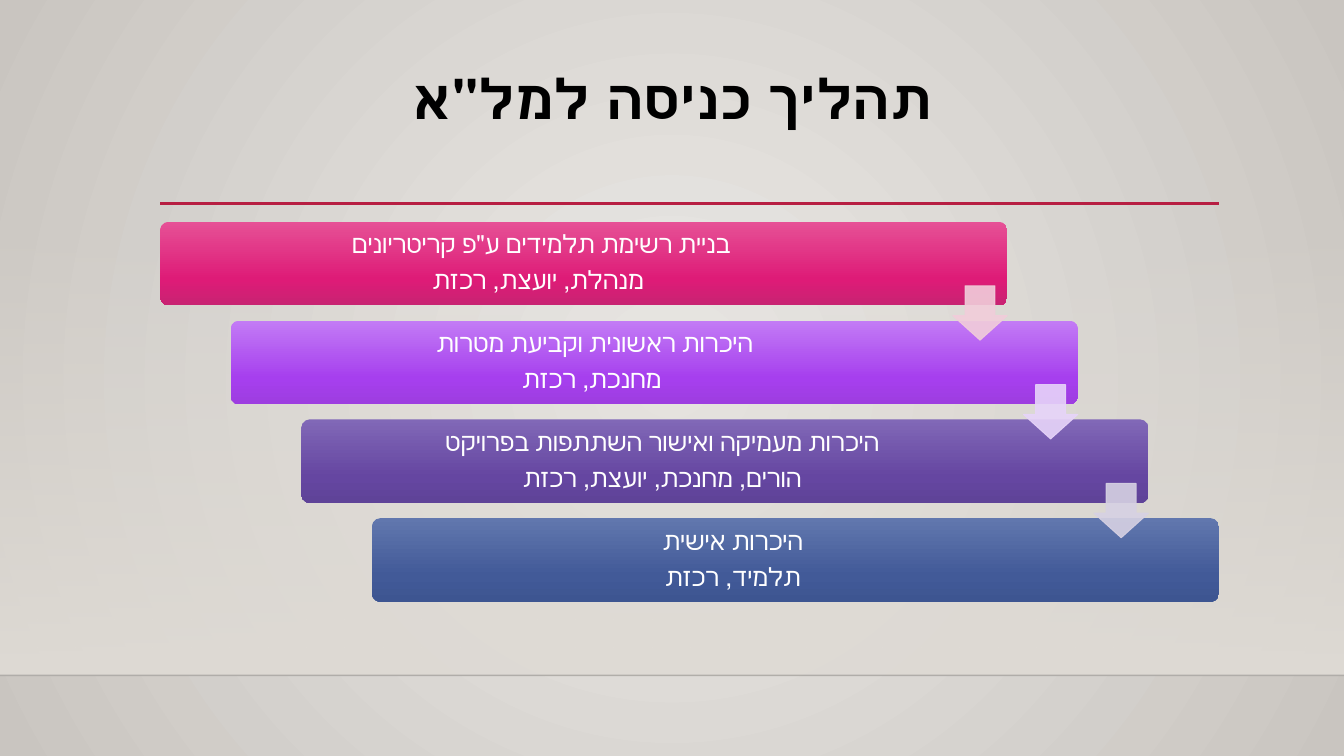
from dataclasses import dataclass

from lxml.etree import SubElement
from pptx import Presentation
from pptx.dml.color import RGBColor
from pptx.enum.shapes import MSO_CONNECTOR, MSO_SHAPE
from pptx.enum.text import MSO_ANCHOR, PP_ALIGN
from pptx.oxml.ns import qn
from pptx.util import Inches, Pt


@dataclass(frozen=True)
class Theme:
    font: str = "Roboto"
    title_size: float = 39.4
    body_size: float = 18
    title: str = "000000"
    body: str = "FFFFFF"
    rule: str = "B71E42"
    floor: str = "DFDBD5"
    floor_line: str = "000001"
    backdrop: tuple = ((0, "EBE9E6", 100), (100, "C9C5C0", 100))


@dataclass(frozen=True)
class Box:
    left: float
    top: float
    width: float
    height: float

    def inches(self):
        return [Inches(n) for n in (self.left, self.top, self.width, self.height)]


@dataclass(frozen=True)
class Step:
    lines: tuple
    colors: tuple
    arrow: str = ""
    text_share: float = 0.85


THEME = Theme()
WIDTH, HEIGHT = 13.33, 7.5
TITLE = "תהליך כניסה למל\"א"
STEPS = (
    Step(("בניית רשימת תלמידים ע\"פ קריטריונים ", "מנהלת, יועצת, רכזת"),
         ("E65196", "DE1B77", "C82372"), "F1CDDA", 0.89),
    Step(("היכרות ראשונית וקביעת מטרות ", "מחנכת, רכזת"),
         ("C37CF5", "A63FEE", "9D3DE0"), "E7D4F9"),
    Step(("היכרות מעמיקה ואישור השתתפות בפרויקט", "הורים, מחנכת, יועצת, רכזת"),
         ("8168B7", "6546A1", "5F4398"), "D6D1E3"),
    Step(("היכרות אישית", "תלמיד, רכזת"), ("6177AE", "425A98", "3D5591")),
)


def set_alpha(color_parent, percent):
    for color in color_parent.iter(qn("a:srgbClr")):
        SubElement(color, qn("a:alpha"), val=str(percent * 1000))


def apply_gradient(fill, owner, stops, circular=False):
    """Fill owner with (position, color, opacity) stops, downwards or from the centre."""
    fill.gradient()
    gradient = next(owner.iter(qn("a:gradFill")))
    for child in list(gradient):
        gradient.remove(child)
    stop_list = SubElement(gradient, qn("a:gsLst"))
    for position, color, opacity in stops:
        stop = SubElement(stop_list, qn("a:gs"), pos=str(position * 1000))
        SubElement(stop, qn("a:srgbClr"), val=color)
        if opacity < 100:
            set_alpha(stop, opacity)
    if circular:
        shade = SubElement(gradient, qn("a:path"), path="circle")
        SubElement(shade, qn("a:fillToRect"), l="50000", t="50000", r="50000", b="50000")
    else:
        SubElement(gradient, qn("a:lin"), ang="5400000", scaled="0")


def format_paragraph(paragraph, size, color, bold=False):
    paragraph.alignment = PP_ALIGN.CENTER
    paragraph.line_spacing = 0.9
    paragraph._p.get_or_add_pPr().set("rtl", "1")
    font = paragraph.font
    font.name, font.size, font.bold = THEME.font, Pt(size), bold
    font.color.rgb = RGBColor.from_string(color)


def add_shape(slide, kind, box):
    shape = slide.shapes.add_shape(kind, *box.inches())
    shape.shadow.inherit = False
    shape.line.fill.background()
    return shape


def add_rule(slide, left, top, width, color, weight):
    line = slide.shapes.add_connector(
        MSO_CONNECTOR.STRAIGHT, Inches(left), Inches(top), Inches(left + width), Inches(top))
    line.line.color.rgb = RGBColor.from_string(color)
    line.line.width = Pt(weight)
    SubElement(line._element.spPr, qn("a:effectLst"))
    return line


def add_backdrop(slide, floor):
    apply_gradient(slide.background.fill, slide._element, THEME.backdrop, circular=True)
    shape = add_shape(slide, MSO_SHAPE.RECTANGLE, floor)
    apply_gradient(shape.fill, shape._element.spPr,
                   ((0, THEME.floor, 0), (100, THEME.floor, 100)))
    edge = add_rule(slide, floor.left, floor.top + floor.height, floor.width,
                    THEME.floor_line, 1)
    set_alpha(edge._element.spPr, 20)


def add_title(slide, box):
    title = slide.shapes.title
    title.left, title.top, title.width, title.height = box.inches()
    frame = title.text_frame
    frame.text = TITLE
    frame.vertical_anchor = MSO_ANCHOR.MIDDLE
    format_paragraph(frame.paragraphs[0], THEME.title_size, THEME.title, bold=True)


def add_bar(slide, box, step):
    bar = add_shape(slide, MSO_SHAPE.ROUNDED_RECTANGLE, box)
    bar.adjustments[0] = 0.1
    apply_gradient(bar.fill, bar._element.spPr,
                   [(position, color, 100) for position, color in zip((0, 69, 100), step.colors)])
    frame = bar.text_frame
    frame.word_wrap = True
    frame.vertical_anchor = MSO_ANCHOR.MIDDLE
    frame.margin_left = frame.margin_top = frame.margin_bottom = Inches(0.09)
    frame.margin_right = Inches(box.width * (1 - step.text_share) + 0.07)
    frame.text = "\n".join(step.lines)
    for index, paragraph in enumerate(frame.paragraphs):
        format_paragraph(paragraph, THEME.body_size, THEME.body)
        if index:
            paragraph.space_before = Pt(6.3)


def add_arrow(slide, box, color):
    arrow = add_shape(slide, MSO_SHAPE.DOWN_ARROW, box)
    arrow.adjustments[0], arrow.adjustments[1] = 0.55, 0.45
    arrow.fill.solid()
    for target in (arrow.fill.fore_color, arrow.line.color):
        target.rgb = RGBColor.from_string(color)
    arrow.line.width = Pt(0.75)
    set_alpha(arrow._element.spPr, 90)


def add_staircase(slide, box):
    """Step equal bars from the top left to the bottom right, with arrows over the gaps."""
    width, height = box.width * 0.8, box.height * 0.22
    shift = (box.width - width) / (len(STEPS) - 1)
    drop = (box.height - height) / (len(STEPS) - 1)
    bars = [Box(box.left + i * shift, box.top + i * drop, width, height)
            for i in range(len(STEPS))]
    for bar, step in zip(bars, STEPS):
        add_bar(slide, bar, step)
    size = height * 0.65
    for bar, step in zip(bars[:-1], STEPS):
        middle = bar.top + (height + drop) / 2
        add_arrow(slide, Box(bar.left + width - size, middle - size / 2, size, size), step.arrow)


def main():
    presentation = Presentation()
    presentation.slide_width, presentation.slide_height = Inches(WIDTH), Inches(HEIGHT)
    slide = presentation.slides.add_slide(presentation.slide_layouts[5])
    add_backdrop(slide, Box(0, 2.21, WIDTH, 4.49))
    add_title(slide, Box(1.47, 0.7, 10.4, 0.62))
    add_rule(slide, 1.59, 2.02, 10.5, THEME.rule, 2.5)
    add_staircase(slide, Box(1.59, 2.2, 10.5, 3.77))
    presentation.save("out.pptx")


if __name__ == "__main__":
    main()
